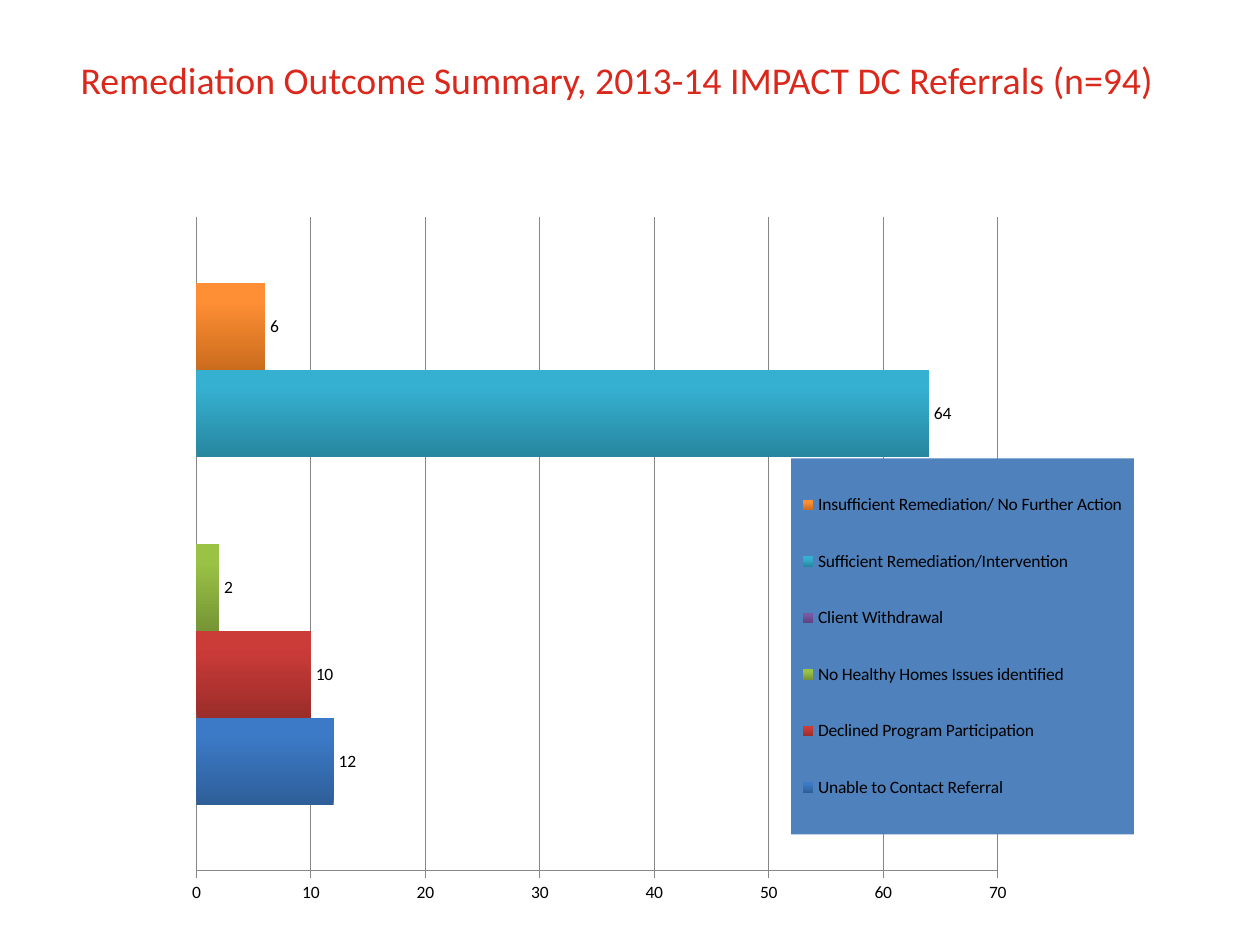
from dataclasses import dataclass

from lxml import etree
from pptx import Presentation
from pptx.chart.data import CategoryChartData
from pptx.dml.color import RGBColor
from pptx.enum.chart import (XL_CHART_TYPE, XL_LABEL_POSITION,
                             XL_LEGEND_POSITION, XL_TICK_MARK)
from pptx.enum.text import MSO_ANCHOR, MSO_AUTO_SIZE, PP_ALIGN
from pptx.oxml.ns import qn
from pptx.util import Cm, Pt

BAR = XL_CHART_TYPE.BAR_CLUSTERED
LABEL_OUTSIDE = XL_LABEL_POSITION.OUTSIDE_END
LEGEND_RIGHT = XL_LEGEND_POSITION.RIGHT
TICK_NONE, TICK_OUT = XL_TICK_MARK.NONE, XL_TICK_MARK.OUTSIDE
TITLE_ONLY = 5


@dataclass(frozen=True)
class Theme:
    font: str = "Calibri"
    title: str = "DA291C"
    text: str = "000000"
    grid: str = "868686"
    legend: str = "4F81BD"
    title_size: float = 21.6
    chart_size: float = 10


THEME = Theme()

# name, value, dark and light end of the bar gradient
OUTCOMES = [
    ("Unable to Contact Referral", 12, "2E5F99", "3C7AC7"),
    ("Declined Program Participation", 10, "9B2D2A", "CB3B38"),
    ("No Healthy Homes Issues identified", 2, "769535", "9AC346"),
    ("Client Withdrawal", None, "5D417E", "7A57A5"),
    ("Sufficient Remediation/Intervention", 64, "2787A0", "36B0D1"),
    ("Insufficient Remediation/ No Further Action", 6, "CB6C1D", "FF8F35"),
]


def rgb(value):
    return RGBColor.from_string(value)


def set_font(font, size, color):
    font.name = THEME.font
    font.size = Pt(size)
    font.color.rgb = rgb(color)


def add_text(sp, text, *, size, color, align=PP_ALIGN.LEFT,
             anchor=MSO_ANCHOR.TOP):
    tf = sp.text_frame
    tf.word_wrap = True
    tf.auto_size = MSO_AUTO_SIZE.NONE
    tf.vertical_anchor = anchor
    p = tf.paragraphs[0]
    p.alignment = align
    r = p.add_run()
    r.text = text
    set_font(r.font, size, color)


def add_title(slide, text):
    sp = slide.shapes.title
    sp.left, sp.top, sp.width, sp.height = Cm(1.37), Cm(1.02), Cm(22.86), Cm(1.85)
    add_text(sp, text, size=THEME.title_size, color=THEME.title)


def manual_layout(x, y, w, h, inner=False):
    """Return a c:layout element placed in fractions of the chart area."""
    layout = etree.Element(qn("c:layout"))
    manual = etree.SubElement(layout, qn("c:manualLayout"))
    settings = [("layoutTarget", "inner")] if inner else []
    settings += [("xMode", "edge"), ("yMode", "edge"),
                 ("x", x), ("y", y), ("w", w), ("h", h)]
    for tag, value in settings:
        etree.SubElement(manual, qn(f"c:{tag}")).set("val", str(value))
    return layout


def format_series(series, value, dark, light):
    fill = series.format.fill
    fill.gradient()
    fill.gradient_angle = 90
    for stop, color, position in zip(fill.gradient_stops, (dark, light), (0, 0.8)):
        stop.color.rgb = rgb(color)
        stop.position = position
    if value is not None:
        labels = series.data_labels
        labels.show_value = True
        labels.position = LABEL_OUTSIDE
        set_font(labels.font, THEME.chart_size, THEME.text)


def format_axes(chart):
    chart.category_axis.visible = False
    axis = chart.value_axis
    axis.minimum_scale, axis.maximum_scale, axis.major_unit = 0, 70, 10
    axis.major_tick_mark, axis.minor_tick_mark = TICK_OUT, TICK_NONE
    axis.has_major_gridlines = True
    for line in (axis.format.line, axis.major_gridlines.format.line):
        line.color.rgb = rgb(THEME.grid)
        line.width = Pt(0.75)


def format_legend(chart):
    chart.has_legend = True
    legend = chart.legend
    legend.position = LEGEND_RIGHT
    legend.include_in_layout = False
    set_font(legend.font, THEME.chart_size, THEME.text)
    element = legend._element
    for old in element.findall(qn("c:layout")):
        element.remove(old)
    element.find(qn("c:legendPos")).addnext(manual_layout(0.65, 0.38, 0.34, 0.53))
    sp_pr = etree.Element(qn("c:spPr"))
    solid = etree.SubElement(sp_pr, qn("a:solidFill"))
    etree.SubElement(solid, qn("a:srgbClr")).set("val", THEME.legend)
    element.find(qn("c:txPr")).addprevious(sp_pr)


def add_outcome_chart(slide):
    data = CategoryChartData()
    data.categories = ["1"]
    for name, value, *_ in OUTCOMES:
        data.add_series(name, [value])
    chart = slide.shapes.add_chart(BAR, Cm(2.74), Cm(3.81), Cm(20.32), Cm(14.38),
                                   data).chart
    chart.has_title = False
    set_font(chart.font, THEME.chart_size, THEME.text)
    plot = chart.plots[0]
    plot.gap_width = 150
    plot.vary_by_categories = False
    for series, (_, *style) in zip(plot.series, OUTCOMES):
        format_series(series, *style)
    format_axes(chart)
    format_legend(chart)
    area = chart._chartSpace.chart.plotArea
    for old in area.findall(qn("c:layout")):
        area.remove(old)
    area.insert(0, manual_layout(0.06, 0.04, 0.795, 0.921, inner=True))


def main():
    prs = Presentation()
    prs.slide_width, prs.slide_height = Cm(25.4), Cm(19.05)
    slide = prs.slides.add_slide(prs.slide_layouts[TITLE_ONLY])
    add_title(slide, "Remediation Outcome Summary, 2013-14 IMPACT DC Referrals (n=94)")
    add_outcome_chart(slide)
    prs.save("out.pptx")


if __name__ == "__main__":
    main()
